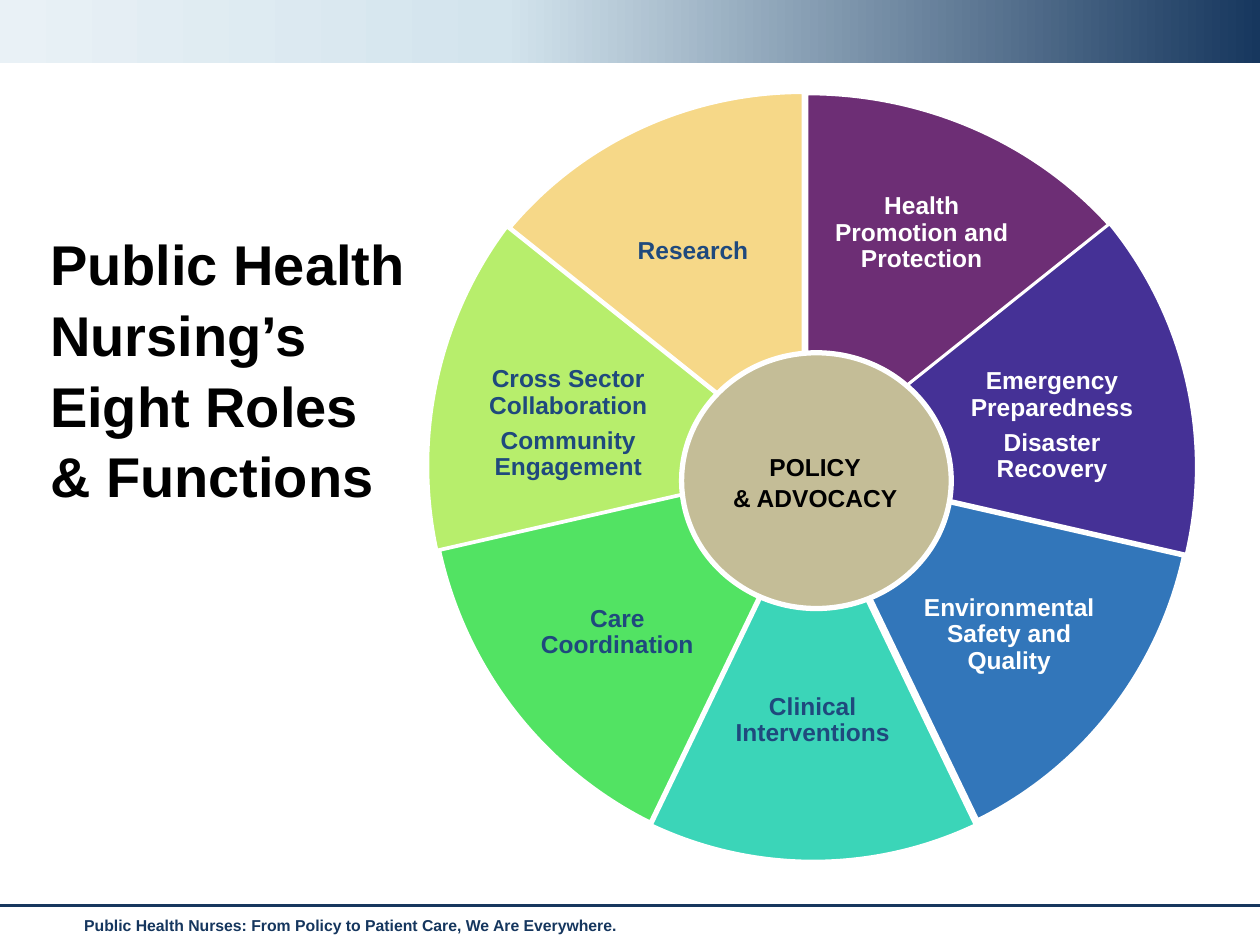
from copy import deepcopy

from lxml.etree import SubElement
from pptx import Presentation
from pptx.dml.color import RGBColor
from pptx.enum.shapes import MSO_CONNECTOR, MSO_SHAPE
from pptx.enum.text import MSO_ANCHOR, PP_ALIGN
from pptx.oxml.ns import qn
from pptx.util import Inches, Pt

COLUMNS, ROWS = 100, 75
SLIDE_WIDTH, SLIDE_HEIGHT = Inches(10), Inches(7.5)

COLORS = {
    "white": "FFFFFF", "black": "000000", "navy": "17375E", "footer": "15365E",
    "mist": "D3E4ED", "pale": "E9F1F6", "label": "1F497D", "hub": "C4BD97",
    "purple": "6D2E75", "indigo": "453196", "blue": "3276BA", "teal": "3BD5B8",
    "green": "52E363", "lime": "B7EE6C", "yellow": "F6D888",
}

BLANK_LINE = 3.3

ROLES = [
    ("purple", (32.8, 7.5, 62.6, 58.6), ["Health Promotion and Protection"],
     "white", (65.7, 12.9, 14.9, 11.2), 0),
    ("indigo", (33, 6.4, 61.9, 61.3), ["Emergency Preparedness", "Disaster Recovery"],
     "white", (75, 28.7, 17, 10.2), 0),
    ("blue", (34.1, 6.8, 60.5, 61.3), ["Environmental Safety and Quality"],
     "white", (72.9, 43.1, 14.4, 11.3), 1),
    ("teal", (34.8, 9.5, 59.5, 58.8), ["Clinical Interventions"],
     "label", (57.6, 55.6, 13.8, 9.8), -2),
    ("green", (34.2, 5.2, 62.1, 63.2), ["Care Coordination"],
     "label", (41.6, 42.7, 14.8, 11.7), 1),
    ("lime", (34, 6.1, 59.8, 61.7), ["Cross Sector Collaboration", "Community Engagement"],
     "label", (36.9, 28.5, 16.4, 10.3), 0),
    ("yellow", (33.8, 7.4, 59.8, 58.2), ["Research"],
     "label", (47.9, 12.8, 14.2, 11.1), 1),
]


def across(columns):
    return round(SLIDE_WIDTH * columns / COLUMNS)


def down(rows):
    return round(SLIDE_HEIGHT * rows / ROWS)


def place(box):
    left, top, width, height = box
    return across(left), down(top), across(width), down(height)


def rgb(name):
    return RGBColor.from_string(COLORS[name])


def add_text(slide, box, paragraphs, size=14, color="black", align=PP_ALIGN.LEFT,
             anchor=MSO_ANCHOR.TOP, spacing=1.0, after=0, insets=(1, 0.5, 1, 0.5)):
    frame = slide.shapes.add_textbox(*place(box)).text_frame
    frame.word_wrap = True
    frame.vertical_anchor = anchor
    left, top, right, bottom = insets
    frame.margin_left, frame.margin_right = across(left), across(right)
    frame.margin_top, frame.margin_bottom = down(top), down(bottom)
    for index, words in enumerate(paragraphs):
        paragraph = frame.add_paragraph() if index else frame.paragraphs[0]
        paragraph.alignment = align
        paragraph.line_spacing = spacing
        paragraph.space_after = Pt(after)
        run = paragraph.add_run()
        run.text = words
        run.font.name = "Arial"
        run.font.size = Pt(size)
        run.font.bold = True
        run.font.color.rgb = rgb(color)


def add_filled(slide, preset, box, color, outline):
    shape = slide.shapes.add_shape(preset, *place(box))
    shape.shadow.inherit = False
    shape.fill.solid()
    shape.fill.fore_color.rgb = rgb(color)
    shape.line.color.rgb = rgb("white")
    shape.line.width = Pt(outline)
    return shape


def add_banner(slide):
    banner = slide.shapes.add_shape(MSO_SHAPE.RECTANGLE, *place((0, 0, COLUMNS, 5)))
    banner.shadow.inherit = False
    banner.line.fill.background()
    banner.fill.gradient()
    banner.fill.gradient_angle = 180
    stop_list = banner.fill._xPr.find(".//" + qn("a:gsLst"))
    stop_list.append(deepcopy(stop_list[-1]))
    shades = [(0, "navy"), (0.6, "mist"), (1, "pale")]
    for stop, (position, color) in zip(banner.fill.gradient_stops, shades):
        stop.position = position
        stop.color.rgb = rgb(color)


def add_rule(slide, row):
    rule = slide.shapes.add_connector(
        MSO_CONNECTOR.STRAIGHT, 0, down(row), SLIDE_WIDTH, down(row))
    rule.line.color.rgb = rgb("navy")
    rule.line.width = Pt(1.75)
    SubElement(rule._element.spPr, qn("a:effectLst"))


def add_wedge(slide, index, box, color):
    wedge = add_filled(slide, MSO_SHAPE.PIE, box, color, 1)
    for side in range(2):
        degrees = (270 + (index + side) * 360 / len(ROLES)) % 360
        wedge.adjustments[side] = degrees * 0.6


def add_label(slide, box, paragraphs, color, lines_lowered):
    shift = lines_lowered * BLANK_LINE
    add_text(slide, box, paragraphs, color=color, align=PP_ALIGN.CENTER,
             anchor=MSO_ANCHOR.MIDDLE, spacing=0.9, after=5,
             insets=(0.2, 0.2 + max(shift, 0), 0.2, 0.2 + max(-shift, 0)))


def main():
    deck = Presentation()
    deck.slide_width, deck.slide_height = SLIDE_WIDTH, SLIDE_HEIGHT
    slide = deck.slides.add_slide(deck.slide_layouts[6])

    add_text(slide, (5.7, 72.2, 87.4, 2.9),
             ["Public Health Nurses: From Policy to Patient Care, We Are Everywhere."],
             size=9, color="footer")
    add_banner(slide)
    add_rule(slide, 71.9)

    for index, (fill, circle, words, ink, label_box, lowered) in enumerate(ROLES):
        add_wedge(slide, index, circle, fill)
        add_label(slide, label_box, words, ink, lowered)

    add_text(slide, (3, 17.5, 30.4, 25.6),
             ["Public Health Nursing’s Eight Roles & Functions"], size=32, spacing=1.05)
    add_filled(slide, MSO_SHAPE.OVAL, (54.1, 28, 21.4, 20.3), "hub", 3)
    add_text(slide, (56.8, 35.3, 15.8, 5.7), ["POLICY", "& ADVOCACY"],
             align=PP_ALIGN.CENTER, spacing=1.05)

    deck.save("out.pptx")


if __name__ == "__main__":
    main()
